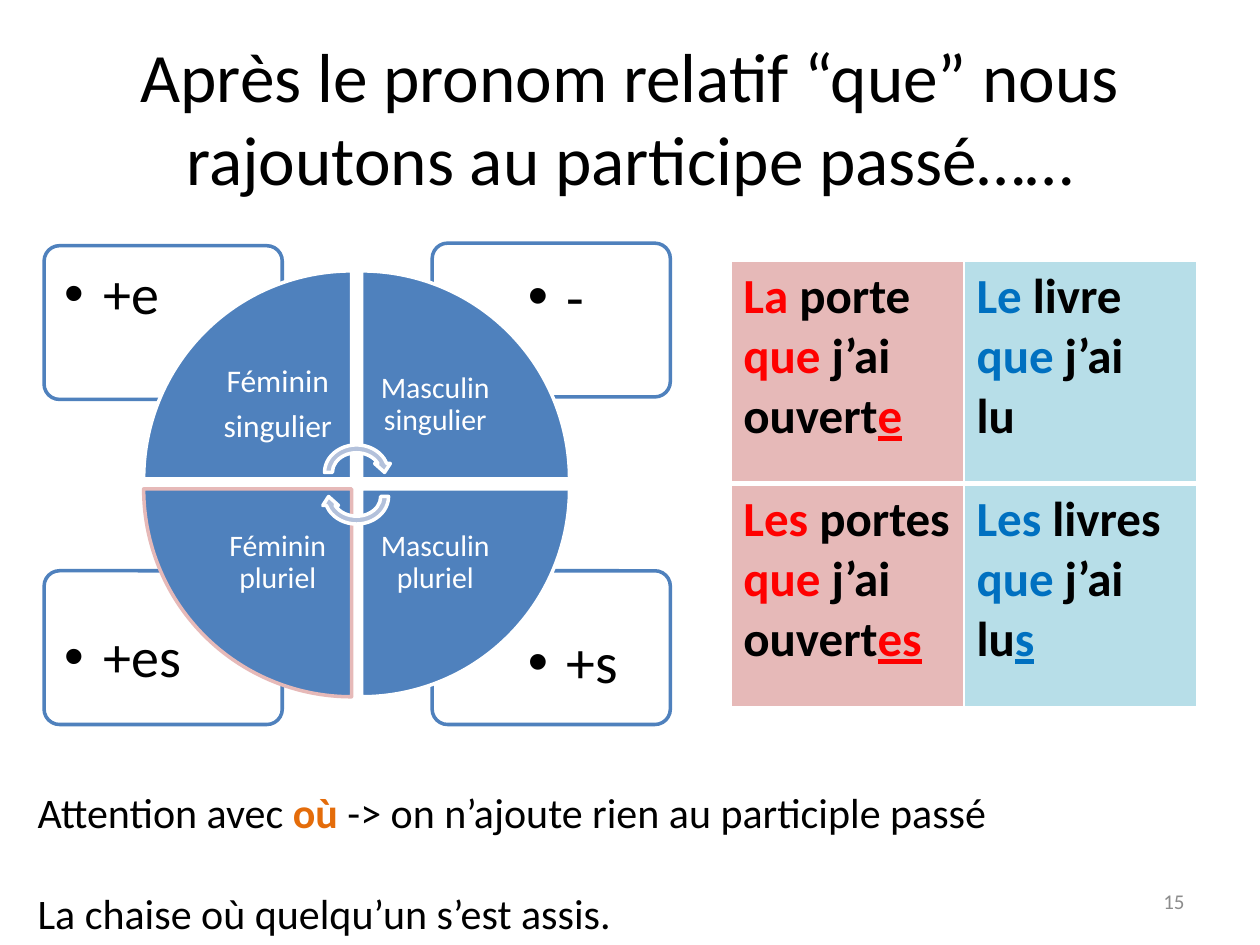
from lxml import etree
from pptx import Presentation
from pptx.dml.color import RGBColor
from pptx.enum.shapes import MSO_SHAPE
from pptx.enum.text import MSO_ANCHOR, PP_ALIGN
from pptx.oxml.ns import qn
from pptx.util import Inches, Pt

ROUND = MSO_SHAPE.ROUNDED_RECTANGLE
WEDGE = MSO_SHAPE.PIE_WEDGE
ARROW = MSO_SHAPE.CIRCULAR_ARROW
TOP, MIDDLE = MSO_ANCHOR.TOP, MSO_ANCHOR.MIDDLE
LEFT, CENTER, RIGHT = PP_ALIGN.LEFT, PP_ALIGN.CENTER, PP_ALIGN.RIGHT

BLACK = RGBColor(0, 0, 0)
WHITE = RGBColor(255, 255, 255)
BLUE = RGBColor(0x4F, 0x81, 0xBD)
PALE = RGBColor(0xB3, 0xC1, 0xDB)
PINK = RGBColor(0xE6, 0xB9, 0xB8)
AQUA = RGBColor(0xB7, 0xDE, 0xE8)
RED = RGBColor(255, 0, 0)
AZURE = RGBColor(0, 0x70, 0xC0)
ORANGE = RGBColor(0xE4, 0x6C, 0x0A)
GRAY = RGBColor(0x8C, 0x8C, 0x8C)


def write(para, text, size, color=BLACK, **form):
    run = para.add_run()
    run.text = text
    run.font.color.rgb = color
    for key, value in {"name": "Calibri", "size": Pt(size), **form}.items():
        setattr(run.font, key, value)


def add_text(shapes, box, inset=None, anchor=TOP):
    frame = shapes.add_textbox(*map(Inches, box)).text_frame
    frame.word_wrap = True
    frame.vertical_anchor = anchor
    if inset is not None:
        for side in ("left", "top", "right", "bottom"):
            setattr(frame, "margin_" + side, Inches(inset))
    return frame


def add_part(shapes, kind, box, fill, line, turn=0):
    part = shapes.add_shape(kind, *map(Inches, box))
    part.shadow.inherit = False
    part.fill.solid()
    part.fill.fore_color.rgb = fill
    part.line.color.rgb = line
    part.line.width = Pt(2)
    part.rotation = turn
    return part


def add_bullet(para):
    props = para._p.get_or_add_pPr()
    props.set("marL", str(Inches(0.31)))
    props.set("indent", str(-Inches(0.31)))
    etree.SubElement(props, qn("a:buFont")).set("typeface", "Arial")
    etree.SubElement(props, qn("a:buChar")).set("char", "•")


def add_card(shapes, box, label, text, size, inset):
    card = add_part(shapes, ROUND, box, WHITE, BLUE)
    card.adjustments[0] = 0.1
    tint = card.fill._xPr.find(qn("a:solidFill"))[0]
    etree.SubElement(tint, qn("a:alpha")).set("val", "90000")
    para = add_text(shapes, label, inset).paragraphs[0]
    para.line_spacing = 0.9
    para.space_after = Pt(0.15 * size)
    add_bullet(para)
    write(para, text, size)


def add_wheel(slide, x, y, w, h):
    shapes = slide.shapes.add_group_shape().shapes
    # Corner cards: column, row, top shift, ending
    card_w, card_h = 1.89, 1.22
    for col, row, shift, text in ((1, 1, 0, "+s"), (0, 1, 0, "+es"),
                                  (1, 0, 0, "-"), (0, 0, 0.02, "+e")):
        left = x + col * (w - card_w)
        top = y + shift + row * (h - card_h - shift)
        label = (left + (0.59 if col else 0.03),
                 top + (0.33 if row else 0.03), 1.27, 0.86)
        add_card(shapes, (left, top, card_w, card_h), label, text,
                 33 if col else 32, 0.17 if col else 0.13)

    # Quarter wedges, clockwise from top left
    mid_x, mid_y, gap = x + w / 2 - 0.005, y + h / 2, 0.04
    wedge, side = 1.65, 1.17
    parts = ((0, 0, ("Féminin", "singulier"), 18, WHITE),
             (1, 0, ("Masculin singulier",), 17, WHITE),
             (1, 1, ("Masculin pluriel",), 17, WHITE),
             (0, 1, ("Féminin pluriel",), 17, PINK))
    for index, (col, row, lines, size, edge) in enumerate(parts):
        def place(length):
            return (mid_x + (gap if col else -gap - length),
                    mid_y + (gap if row else -gap - length), length, length)

        add_part(shapes, WEDGE, place(wedge), BLUE, edge, 90 * index)
        frame = add_text(shapes, place(side), 0.13, MIDDLE)
        for num, line in enumerate(lines):
            para = frame.add_paragraph() if num else frame.paragraphs[0]
            para.alignment = CENTER
            para.line_spacing = 0.9
            para.space_after = Pt(0.35 * size)
            write(para, line, size, WHITE)

    # Turning arrows in the hub
    for drop, turn in ((-0.34, 0), (-0.15, 180)):
        box = (mid_x - 0.285, mid_y + drop, 0.57, 0.5)
        add_part(shapes, ARROW, box, PALE, WHITE, turn)


def add_border(cell, widths):
    props = cell._tc.get_or_add_tcPr()
    for index, (side, width) in enumerate(zip("LRTB", widths)):
        line = etree.Element(qn("a:ln" + side), w=str(Pt(width)))
        fill = etree.SubElement(line, qn("a:solidFill"))
        etree.SubElement(fill, qn("a:srgbClr")).set("val", str(WHITE))
        props.insert(index, line)


def add_grid(slide, x, y, w, h):
    # Each cell: article, noun, verb, ending, last line
    rows = ((("La", " porte ", " j’ai ouvert", "e", ""),
             ("Le", " livre ", " j’ai", "", "lu")),
            (("Les", " portes ", " j’ai ouvert", "es", ""),
             ("Les", " livres ", " j’ai lu", "s", "")))
    looks = ((PINK, RED), (AQUA, AZURE))
    table = slide.shapes.add_table(2, 2, *map(Inches, (x, y, w, h))).table
    for r, row in enumerate(rows):
        table.rows[r].height = Inches(h / 2)
        for c, (article, noun, verb, ending, last) in enumerate(row):
            fill, accent = looks[c]
            cell = table.cell(r, c)
            cell.fill.solid()
            cell.fill.fore_color.rgb = fill
            add_border(cell, (1, 1, 3, 1) if r else (1, 1, 1, 3))
            para = cell.text_frame.paragraphs[0]
            for text, color in ((article, accent), (noun, BLACK),
                                ("que", accent), (verb, BLACK)):
                write(para, text, 28, color, bold=True)
            if ending:
                write(para, ending, 28, accent, bold=True, underline=True)
            if last:
                write(cell.text_frame.add_paragraph(), last, 28, bold=True)


def add_title(slide, *box):
    title = slide.shapes.title
    for key, value in zip(("left", "top", "width", "height"), box):
        setattr(title, key, Inches(value))
    frame = title.text_frame
    frame.word_wrap = True
    frame.vertical_anchor = MIDDLE
    para = frame.paragraphs[0]
    para.alignment = CENTER
    write(para, "Après le pronom relatif “que” nous "
          "rajoutons au participe passé……", 39.6)


def add_note(slide, *box):
    frame = add_text(slide.shapes, box)
    para = frame.paragraphs[0]
    para.space_after = Pt(29)
    write(para, "Attention avec ", 24)
    write(para, "où", 24, ORANGE, bold=True)
    write(para, " -> on n’ajoute rien au participle passé", 24)
    write(frame.add_paragraph(), "La chaise où quelqu’un s’est assis.", 24)


def add_number(slide, *box):
    para = add_text(slide.shapes, box, anchor=MIDDLE).paragraphs[0]
    para.alignment = RIGHT
    write(para, "15", 12, GRAY)


def main():
    deck = Presentation()
    deck.slide_width, deck.slide_height = Inches(10), Inches(7.5)
    slide = deck.slides.add_slide(deck.slide_layouts[5])
    add_title(slide, 0.5, 0.3, 9, 1.25)
    add_wheel(slide, 0.35, 1.93, 4.97, 3.82)
    add_grid(slide, 5.8, 2.07, 3.7, 3.54)
    add_number(slide, 7.17, 6.95, 2.33, 0.4)
    add_note(slide, 0.2, 6.19, 8.82, 1.31)
    deck.save("out.pptx")


if __name__ == "__main__":
    main()
